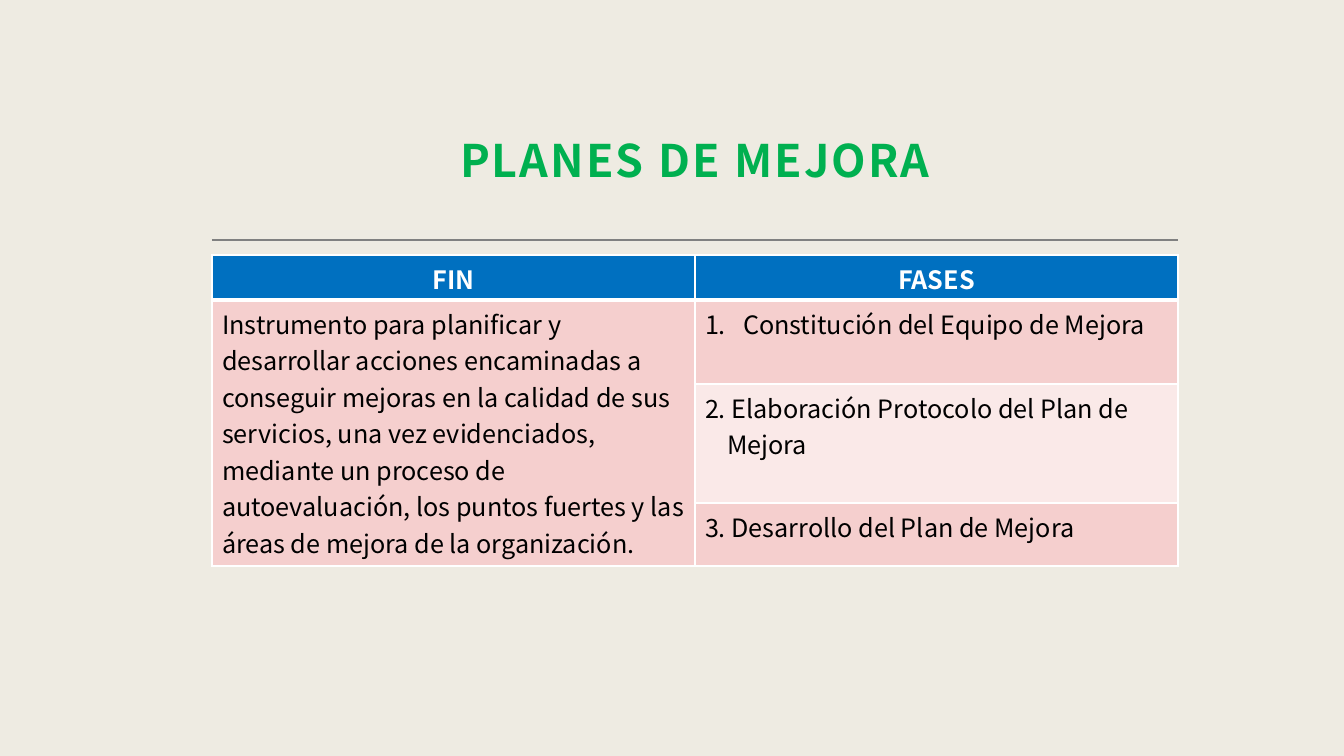
from dataclasses import dataclass

from lxml.etree import SubElement
from pptx import Presentation
from pptx.dml.color import RGBColor
from pptx.enum.shapes import MSO_CONNECTOR
from pptx.enum.text import MSO_ANCHOR, PP_ALIGN
from pptx.oxml.ns import qn
from pptx.util import Emu, Pt

FONT = "Noto Sans CJK JP"
COLORS = {
    "background": "EEEBE2", "title": "00B050", "rule": "808080",
    "header": "0070C0", "band": "F5CFCE", "light_band": "FAE9E8",
    "white": "FFFFFF", "black": "000000",
}
LEFT, WIDTH = 212, 966
COLUMNS = 2
ROW_HEIGHTS = (45, 84, 119, 63)


@dataclass
class Cell:
    row: int
    col: int
    lines: tuple[str, ...]
    fill: str
    header: bool = False
    numbered: bool = False
    rows: int = 1


CELLS = (
    Cell(0, 0, ("FIN",), "header", header=True),
    Cell(0, 1, ("FASES",), "header", header=True),
    Cell(1, 0, ("Instrumento para planificar y desarrollar acciones encaminadas a "
                "conseguir mejoras en la calidad de sus servicios, una vez evidenciados, "
                "mediante un proceso de autoevaluación, los puntos fuertes y las áreas "
                "de mejora de la organización.",), "band", rows=3),
    Cell(1, 1, ("Constitución del Equipo de Mejora",), "band", numbered=True),
    Cell(2, 1, ("2. Elaboración Protocolo del Plan de", "Mejora"), "light_band"),
    Cell(3, 1, ("3. Desarrollo del Plan de Mejora",), "band"),
)


def px(n: int) -> Emu:
    return Emu(round(n * 914400 / 100.8))


def rgb(name: str) -> RGBColor:
    return RGBColor.from_string(COLORS[name])


def write(p, text: str, *, size: int = 18, color: str = "black", bold: bool = False,
          align=PP_ALIGN.LEFT, tracking: int = 0, indent: int = 0,
          numbered: bool = False) -> None:
    p.alignment = align
    r = p.add_run()
    r.text = text
    r.font.name, r.font.size, r.font.bold = FONT, Pt(size), bold
    r.font.color.rgb = rgb(color)
    if tracking:
        r.font._element.set("spc", str(tracking))
    pPr = p._p.get_or_add_pPr()
    if indent:
        pPr.set("marL", str(px(indent)))
    if numbered:
        pPr.set("indent", str(-px(indent)))
        SubElement(pPr, qn("a:buAutoNum"), type="arabicPeriod")


def add_borders(cell, bottom: int) -> None:
    tcPr = cell._tc.get_or_add_tcPr()
    for side, width in (("L", 1), ("R", 1), ("T", 1), ("B", bottom)):
        ln = SubElement(tcPr, qn(f"a:ln{side}"), w=str(Pt(width)))
        fill = SubElement(ln, qn("a:solidFill"))
        SubElement(fill, qn("a:srgbClr"), val=COLORS["white"])


def add_title(s) -> None:
    tf = s.shapes.add_textbox(px(LEFT), px(48), px(WIDTH), px(148)).text_frame
    tf.word_wrap = True
    tf.vertical_anchor = MSO_ANCHOR.BOTTOM
    tf.margin_left = tf.margin_right = tf.margin_top = px(12)
    tf.margin_bottom = px(10)
    p = tf.paragraphs[0]
    p.line_spacing = 1.3
    write(p, "PLANES DE MEJORA", size=32, color="title", bold=True,
          align=PP_ALIGN.CENTER, tracking=150)


def add_rule(s) -> None:
    line = s.shapes.add_connector(MSO_CONNECTOR.STRAIGHT, px(LEFT), px(240),
                                  px(LEFT + WIDTH), px(240))
    line.line.color.rgb = rgb("rule")
    line.line.width = Pt(2)
    SubElement(line._element.spPr, qn("a:effectLst"))


def add_plan_table(s) -> None:
    table = s.shapes.add_table(len(ROW_HEIGHTS), COLUMNS, px(LEFT), px(255),
                               px(WIDTH), px(sum(ROW_HEIGHTS))).table
    for row, height in zip(table.rows, ROW_HEIGHTS):
        row.height = px(height)
    for row in range(len(ROW_HEIGHTS)):
        for col in range(COLUMNS):
            add_borders(table.cell(row, col), bottom=3 if row == 0 else 1)

    for item in CELLS:
        cell = table.cell(item.row, item.col)
        if item.rows > 1:
            cell.merge(table.cell(item.row + item.rows - 1, item.col))
        cell.fill.solid()
        cell.fill.fore_color.rgb = rgb(item.fill)
        tf = cell.text_frame
        for i, text in enumerate(item.lines):
            p = tf.add_paragraph() if i else tf.paragraphs[0]
            write(p, text, bold=item.header, color="white" if item.header else "black",
                  align=PP_ALIGN.CENTER if item.header else PP_ALIGN.LEFT,
                  indent=38 if item.numbered else 22 * i, numbered=item.numbered)


def main() -> None:
    prs = Presentation()
    prs.slide_width, prs.slide_height = px(1344), px(756)
    s = prs.slides.add_slide(prs.slide_layouts[6])
    s.background.fill.solid()
    s.background.fill.fore_color.rgb = rgb("background")

    # Heading
    add_title(s)
    add_rule(s)
    # Purpose and phases
    add_plan_table(s)
    prs.save("out.pptx")


if __name__ == "__main__":
    main()
